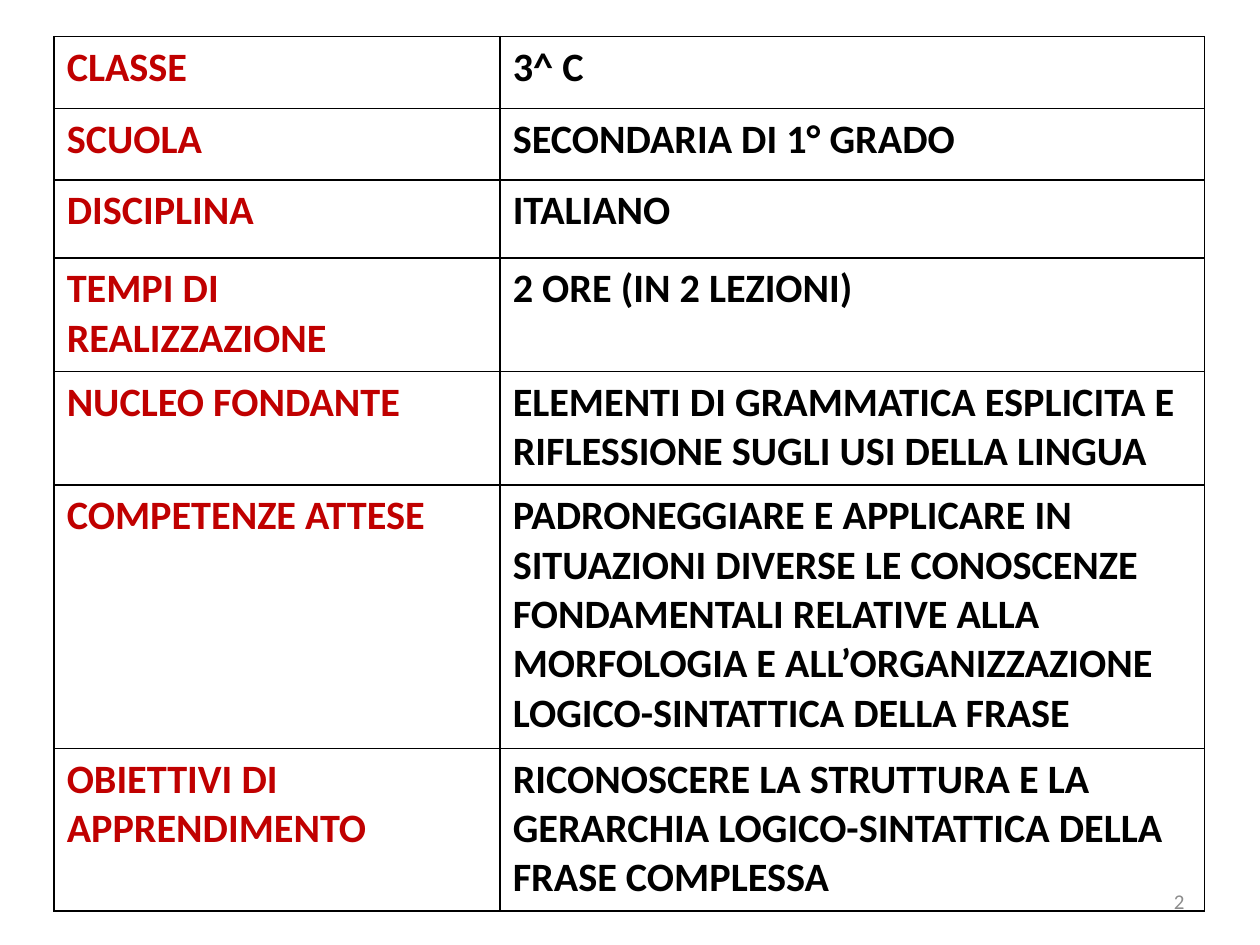
from lxml.etree import SubElement
from pptx import Presentation
from pptx.dml.color import RGBColor
from pptx.enum.text import MSO_ANCHOR as Anchor, PP_ALIGN as Align
from pptx.oxml.ns import qn
from pptx.util import Inches, Pt

# Content: row height, label, text
ROWS = [
    (0.57, "CLASSE", "3^ C"),
    (0.57, "SCUOLA", "SECONDARIA DI 1° GRADO"),
    (0.62, "DISCIPLINA", "ITALIANO"),
    (0.9, "TEMPI DI REALIZZAZIONE", "2 ORE (IN 2 LEZIONI)"),
    (0.9, "NUCLEO FONDANTE",
     "ELEMENTI DI GRAMMATICA ESPLICITA E RIFLESSIONE SUGLI USI DELLA LINGUA"),
    (2.09, "COMPETENZE ATTESE",
     "PADRONEGGIARE E APPLICARE IN SITUAZIONI DIVERSE LE CONOSCENZE "
     "FONDAMENTALI RELATIVE ALLA MORFOLOGIA E ALL’ORGANIZZAZIONE "
     "LOGICO-SINTATTICA DELLA FRASE"),
    (1.29, "OBIETTIVI DI APPRENDIMENTO",
     "RICONOSCERE LA STRUTTURA E LA GERARCHIA LOGICO-SINTATTICA "
     "DELLA FRASE COMPLESSA"),
]
PAGE = "2"

# Format
WIDE, HIGH = 10, 7.5
LEFT, TOP = 0.43, 0.29
COLS = [3.54, 5.59]
INKS = ["C00000", "000000"]
BODY = {"name": "Calibri", "size": Pt(23), "bold": True}
FOOT = {"name": "Calibri", "size": Pt(12), "bold": False}


def color(code):
    return RGBColor.from_string(code)


def write(frame, text, style, ink):
    run = frame.paragraphs[0].add_run()
    run.text = text
    for key, val in style.items():
        setattr(run.font, key, val)
    run.font.color.rgb = color(ink)


def border(cell, ink="000000", width=Pt(1)):
    props = cell._tc.get_or_add_tcPr()
    for side in ("lnL", "lnR", "lnT", "lnB"):
        line = SubElement(props, qn(f"a:{side}"), w=str(width))
        fill = SubElement(line, qn("a:solidFill"))
        SubElement(fill, qn("a:srgbClr"), val=ink)


deck = Presentation()
deck.slide_width, deck.slide_height = Inches(WIDE), Inches(HIGH)
slide = deck.slides.add_slide(deck.slide_layouts[6])

# Lesson table
tall = sum(row[0] for row in ROWS)
table = slide.shapes.add_table(
    len(ROWS), len(COLS), Inches(LEFT), Inches(TOP),
    Inches(sum(COLS)), Inches(tall)).table
table.first_row = table.horz_banding = False
for col, width in zip(table.columns, COLS):
    col.width = Inches(width)
for row, (height, *texts) in zip(table.rows, ROWS):
    row.height = Inches(height)
    for cell, text, ink in zip(row.cells, texts, INKS):
        border(cell)
        cell.fill.background()
        write(cell.text_frame, text, BODY, ink)

# Page number
box = slide.shapes.add_textbox(
    Inches(7.17), Inches(6.95), Inches(2.33), Inches(0.4))
frame = box.text_frame
frame.word_wrap = True
frame.vertical_anchor = Anchor.MIDDLE
frame.paragraphs[0].alignment = Align.RIGHT
write(frame, PAGE, FOOT, "8C8C8C")

deck.save("out.pptx")
